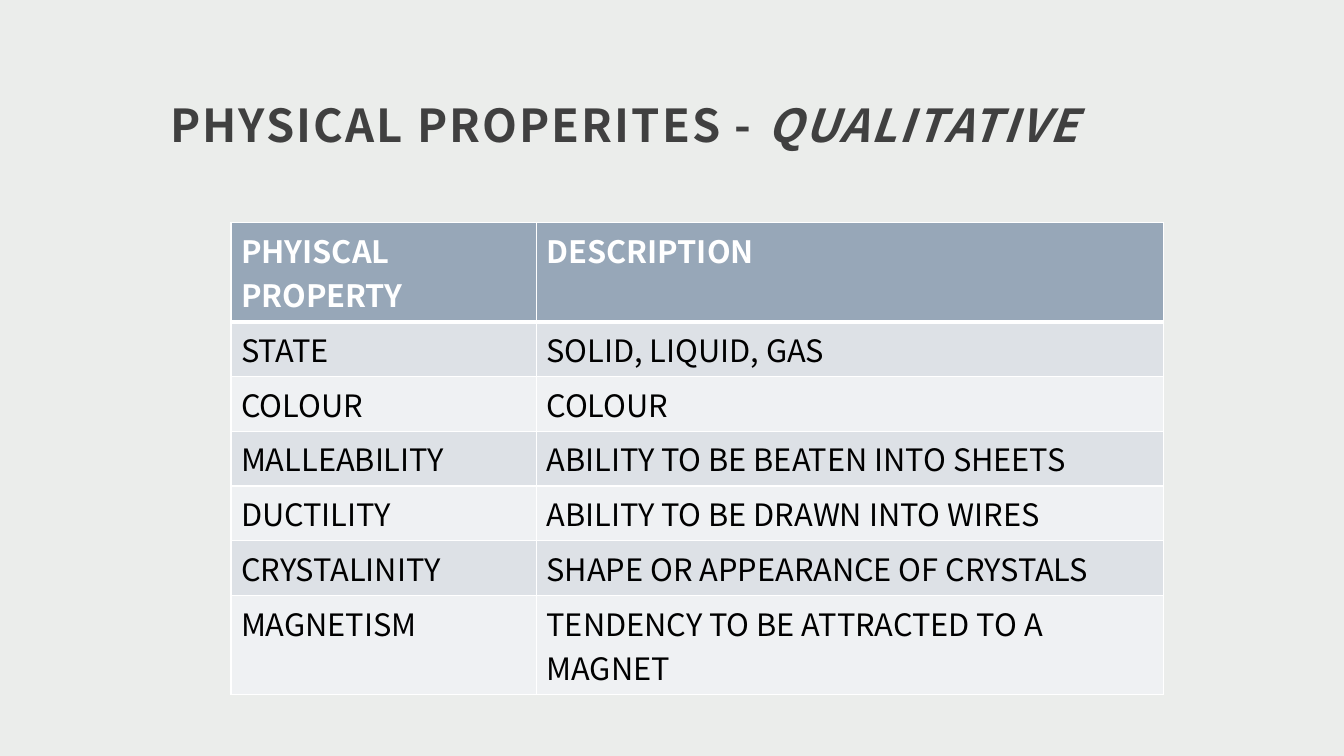
from dataclasses import dataclass

from lxml.etree import SubElement
from pptx import Presentation
from pptx.dml.color import RGBColor
from pptx.enum.text import MSO_ANCHOR
from pptx.oxml import parse_xml
from pptx.oxml.ns import nsdecls, qn
from pptx.util import Cm, Pt

FONT = "Noto Sans CJK JP"
BACKGROUND = RGBColor(0xEB, 0xED, 0xEB)
TITLE_GREY = RGBColor(0x40, 0x40, 0x40)
WHITE = RGBColor(0xFF, 0xFF, 0xFF)
BLACK = RGBColor(0x00, 0x00, 0x00)
HEADER_BLUE = RGBColor(0x97, 0xA7, 0xB8)
BAND_DARK = RGBColor(0xDD, 0xE1, 0xE6)
BAND_LIGHT = RGBColor(0xEF, 0xF1, 0xF3)


@dataclass(frozen=True)
class Property:
    name: str
    description: str
    height: float = 1.38


HEADER = Property("PHYISCAL PROPERTY", "DESCRIPTION", 2.5)
PROPERTIES = [
    Property("STATE", "SOLID, LIQUID, GAS"),
    Property("COLOUR", "COLOUR"),
    Property("MALLEABILITY", "ABILITY TO BE BEATEN INTO SHEETS"),
    Property("DUCTILITY", "ABILITY TO BE DRAWN INTO WIRES"),
    Property("CRYSTALINITY", "SHAPE OR APPEARANCE OF CRYSTALS"),
    Property("MAGNETISM", "TENDENCY TO BE ATTRACTED TO A MAGNET", 2.5),
]


def add_run(paragraph, text: str, size: float, color: RGBColor,
            bold: bool = False, italic: bool = False):
    run = paragraph.add_run()
    run.text = text
    formats = {"name": FONT, "size": Pt(size), "bold": bold, "italic": italic}
    for attribute, value in formats.items():
        setattr(run.font, attribute, value)
    run.font.color.rgb = color
    # East Asian typeface keeps the same font for every script
    SubElement(run.font._element, qn("a:ea"), typeface=FONT)
    return run


def add_title(slide) -> None:
    title = slide.shapes.add_textbox(Cm(3.99), Cm(0.56), Cm(28.78), Cm(4.42))
    frame = title.text_frame
    layout = {"word_wrap": True, "vertical_anchor": MSO_ANCHOR.MIDDLE,
              "margin_left": Cm(0.3), "margin_right": Cm(0.3),
              "margin_top": Cm(0.3), "margin_bottom": Cm(0.25)}
    for attribute, value in layout.items():
        setattr(frame, attribute, value)
    heading = frame.paragraphs[0]
    heading.line_spacing = 1.5
    for text, italic in (("PHYSICAL PROPERITES - ", False), ("QUALITATIVE", True)):
        run = add_run(heading, text, 32.4, TITLE_GREY, bold=True, italic=italic)
        run.font._element.set("spc", "150")


def set_borders(cell, widths: dict[str, float]) -> None:
    for position, (side, width) in enumerate(widths.items()):
        border = parse_xml(
            f'<a:ln{side} {nsdecls("a")} w="{Pt(width)}"><a:solidFill>'
            f'<a:srgbClr val="{WHITE}"/></a:solidFill></a:ln{side}>')
        cell._tc.get_or_add_tcPr().insert(position, border)


def add_property_table(slide) -> None:
    rows = [HEADER, *PROPERTIES]
    height = sum(row.height for row in rows)
    table = slide.shapes.add_table(
        len(rows), 2, Cm(5.82), Cm(5.61), Cm(23.5), Cm(height)).table
    for column, width in zip(table.columns, (7.7, 15.8)):
        column.width = Cm(width)

    for index, row in enumerate(rows):
        table.rows[index].height = Cm(row.height)
        is_header = index == 0
        band = BAND_DARK if index % 2 else BAND_LIGHT
        borders = {"L": 1, "R": 1, "T": 3 if index == 1 else 1,
                   "B": 3 if is_header else 1}
        for cell, text in zip(table.rows[index].cells, (row.name, row.description)):
            cell.fill.solid()
            cell.fill.fore_color.rgb = HEADER_BLUE if is_header else band
            add_run(cell.text_frame.paragraphs[0], text, 22,
                    WHITE if is_header else BLACK, bold=is_header)
            set_borders(cell, borders)


def main() -> None:
    deck = Presentation()
    deck.slide_width, deck.slide_height = Cm(33.87), Cm(19.05)
    slide = deck.slides.add_slide(deck.slide_layouts[6])
    slide.background.fill.solid()
    slide.background.fill.fore_color.rgb = BACKGROUND
    add_title(slide)
    add_property_table(slide)
    deck.save("out.pptx")


if __name__ == "__main__":
    main()
